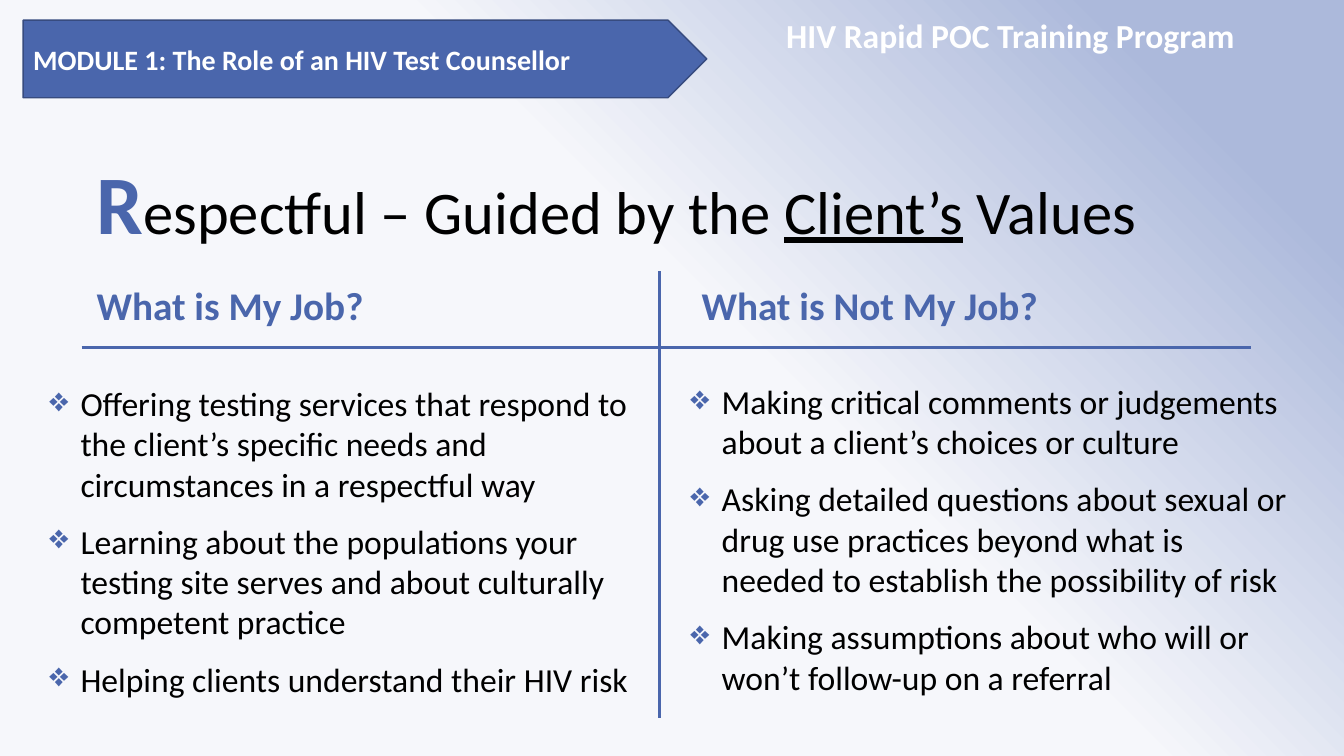
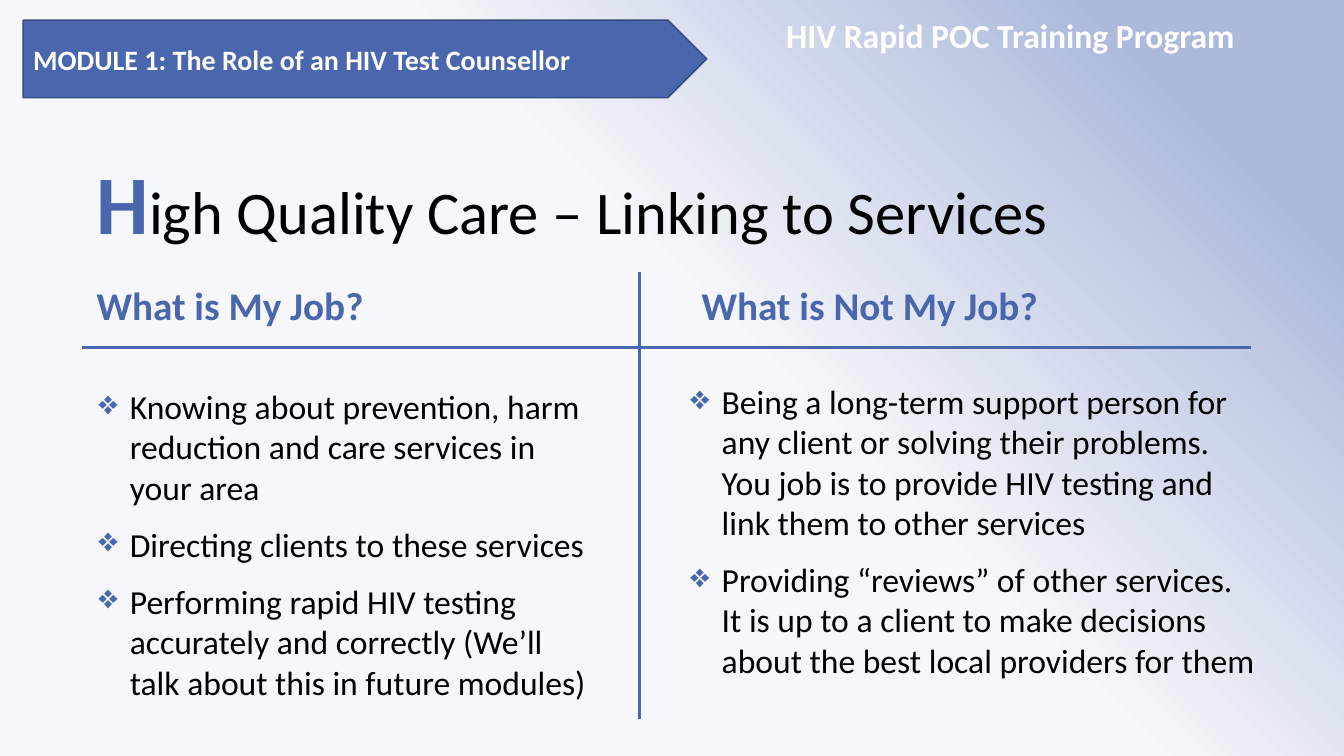
"""Build two slides contrasting what is and is not an HIV test counsellor's job."""
import pptx
import pptx.dml.color
import pptx.enum.shapes
import pptx.enum.text
import pptx.oxml
import pptx.oxml.ns
import pptx.util
from lxml import etree

Inches, Pt = pptx.util.Inches, pptx.util.Pt
qn = pptx.oxml.ns.qn

COLOURS = {
    "accent": "4A66AC",
    "edge": "374B7F",
    "text": "000000",
    "white": "FFFFFF",
    "pale": "F6F7FB",
    "mist": "ACB9DB",
    "haze": "C8D1E7",
}
BACKGROUND = [(55, "pale"), (88, "mist"), (100, "mist"), (100, "haze")]
FONT = "Calibri"
PROGRAM = "HIV Rapid POC Training Program"
MODULE = "MODULE 1: The Role of an HIV Test Counsellor"
HEADINGS = ("What is My Job?", "What is Not My Job?")
HEADING_TAB = 6
RULE_Y = 3.45
DIVIDER_HEIGHT = 4.43
INDENT = 0.31

SLIDES = [
    {
        "title": [("R", "initial"), ("espectful – Guided by the ", "plain"),
                  ("Client’s", "underlined"), (" Values", "plain")],
        "divider": (6.54, 2.69),
        "columns": [
            ((0.39, 3.75, 6.29, 3.26), [
                "Offering testing services that respond to the client’s specific "
                "needs and circumstances in a respectful way",
                "Learning about the populations your testing site serves and about "
                "culturally competent practice",
                "Helping clients understand their HIV risk",
            ]),
            ((6.75, 3.73, 6.11, 3.26), [
                "Making critical comments or judgements about a client’s choices "
                "or culture",
                "Asking detailed questions about sexual or drug use practices beyond "
                "what is needed to establish the possibility of risk",
                "Making assumptions about who will or won’t follow-up on a referral",
            ]),
        ],
    },
    {
        "title": [("H", "initial"),
                  ("igh Quality Care – Linking to Services", "plain")],
        "divider": (6.34, 2.7),
        "columns": [
            ((0.88, 3.78, 5.07, 3.26), [
                "Knowing about prevention, harm reduction and care services in "
                "your area",
                "Directing clients to these services",
                "Performing rapid HIV testing accurately and correctly (We’ll talk "
                "about this in future modules)",
            ]),
            ((6.75, 3.73, 5.82, 3.1), [
                "Being a long-term support person for any client or solving their "
                "problems. You job is to provide HIV testing and link them to other "
                "services",
                "Providing “reviews” of other services. It is up to a client to make "
                "decisions about the best local providers for them",
            ]),
        ],
    },
]


def rgb(name):
    return pptx.dml.color.RGBColor.from_string(COLOURS[name])


def style(font, size, colour, bold=False):
    font.name, font.size, font.bold = FONT, Pt(size), bold
    font.color.rgb = rgb(colour)


def add_text(slide, box, lines=("",)):
    frame = slide.shapes.add_textbox(*map(Inches, box)).text_frame
    frame.word_wrap = True
    frame.text = "\n".join(lines)
    return frame


def add_line(slide, *ends):
    line = slide.shapes.add_connector(
        pptx.enum.shapes.MSO_CONNECTOR.STRAIGHT, *map(Inches, ends))
    line.line.color.rgb = rgb("accent")
    line.line.width = Pt(2.25)
    etree.SubElement(line._element.spPr, qn("a:effectLst"))


def paint_background(master):
    fill = master.background.fill
    fill.gradient()
    fill.gradient_angle = 45
    stops = master.element.find(".//" + qn("p:bg")).find(".//" + qn("a:gsLst"))
    for stop in list(stops):
        stops.remove(stop)
    for position, name in BACKGROUND:
        stop = etree.SubElement(stops, qn("a:gs"), pos=str(position * 1000))
        etree.SubElement(stop, qn("a:srgbClr"), val=COLOURS[name])


def add_banner(slide):
    program = add_text(slide, (7.7, 0.1, 5.5, 0.4), [PROGRAM])
    style(program.paragraphs[0].runs[0].font, 24, "white", True)

    banner = slide.shapes.add_shape(
        pptx.enum.shapes.MSO_SHAPE.PENTAGON,
        *map(Inches, (0.23, 0.2, 6.78, 0.77)))
    banner.shadow.inherit = False
    banner.fill.solid()
    banner.fill.fore_color.rgb = rgb("accent")
    banner.line.color.rgb = rgb("edge")
    banner.line.width = Pt(1)
    frame = banner.text_frame
    frame.text = MODULE
    frame.vertical_anchor = pptx.enum.text.MSO_ANCHOR.MIDDLE
    frame.paragraphs[0].alignment = pptx.enum.text.PP_ALIGN.LEFT
    style(frame.paragraphs[0].runs[0].font, 20, "white", True)


def add_title(slide, pieces):
    frame = add_text(slide, (0.86, 1.72, 11.48, 0.83))
    frame.vertical_anchor = pptx.enum.text.MSO_ANCHOR.BOTTOM
    title = frame.paragraphs[0]
    title.line_spacing = 0.9
    title.space_after = Pt(18)
    for text, look in pieces:
        run = title.add_run()
        run.text = text
        if look == "initial":
            style(run.font, 59.4, "accent", True)
        else:
            style(run.font, 43.2, "text")
            run.font.underline = look == "underlined"


def add_headings(slide):
    frame = add_text(slide, (0.86, 2.79, 10.02, 0.6), ["\t".join(HEADINGS)])
    headings = frame.paragraphs[0]
    tabs = etree.SubElement(headings._p.get_or_add_pPr(), qn("a:tabLst"))
    etree.SubElement(tabs, qn("a:tab"), pos=str(Inches(HEADING_TAB)), algn="l")
    headings.line_spacing = 0.9
    for run in headings.runs:
        style(run.font, 28, "accent", True)


def add_column(slide, box, points):
    for point in add_text(slide, box, points).paragraphs:
        properties = point._p.get_or_add_pPr()
        properties.set("marL", str(Inches(INDENT)))
        properties.set("indent", str(-Inches(INDENT)))
        colour = etree.SubElement(properties, qn("a:buClr"))
        etree.SubElement(colour, qn("a:srgbClr"), val=COLOURS["accent"])
        etree.SubElement(properties, qn("a:buChar"), char="❖")
        point.space_after = Pt(12)
        style(point.runs[0].font, 24, "text")


def main():
    deck = pptx.Presentation()
    deck.slide_width, deck.slide_height = Inches(13.33), Inches(7.5)
    paint_background(deck.slide_master)
    for content in SLIDES:
        slide = deck.slides.add_slide(deck.slide_layouts[6])
        add_banner(slide)
        add_title(slide, content["title"])
        add_headings(slide)
        x, top = content["divider"]
        add_line(slide, x, top, x, top + DIVIDER_HEIGHT)
        add_line(slide, 0.81, RULE_Y, 12.41, RULE_Y)
        for box, points in content["columns"]:
            add_column(slide, box, points)
    deck.save("out.pptx")


if __name__ == "__main__":
    main()
